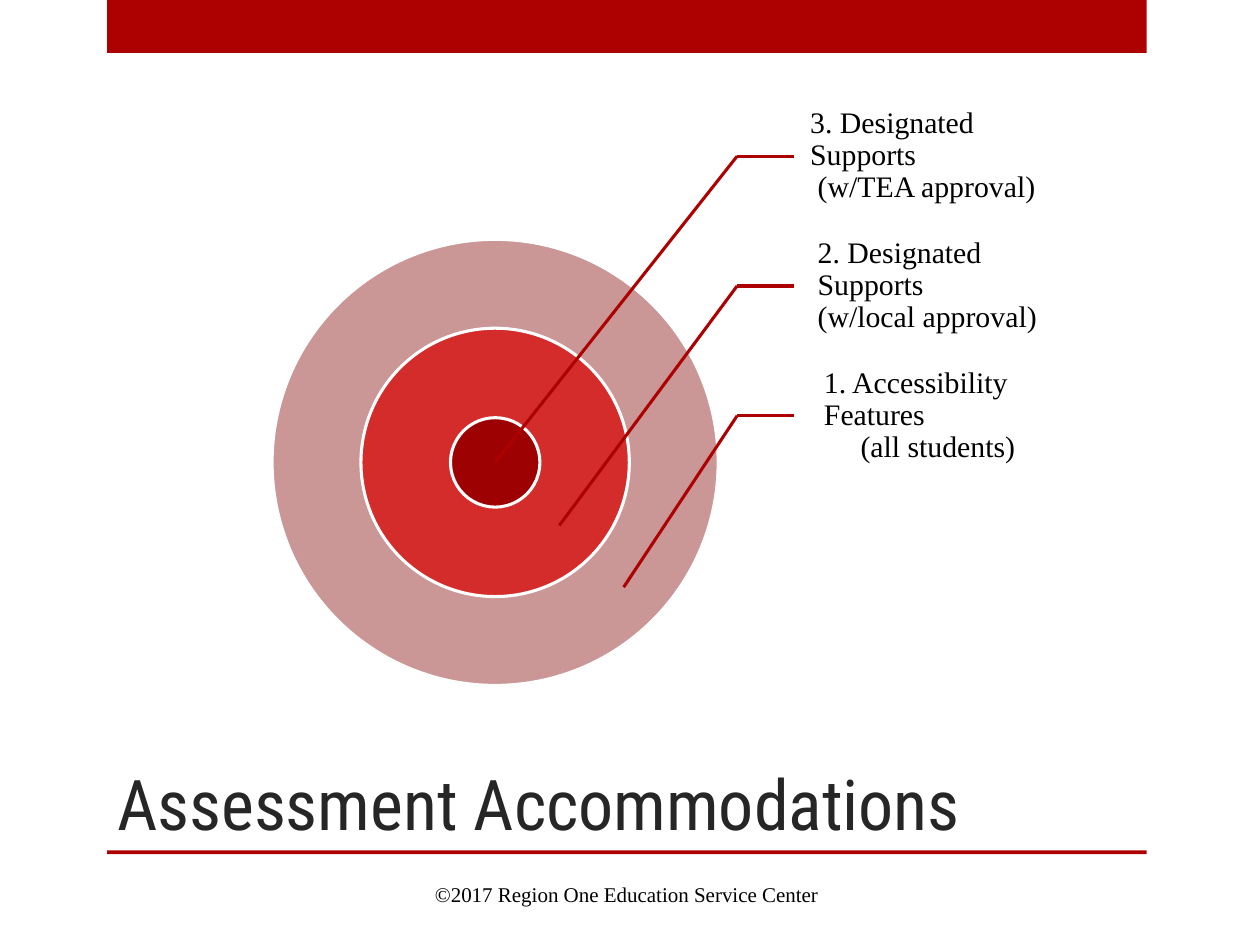
from pptx import Presentation
from pptx.dml.color import RGBColor
from pptx.enum.shapes import MSO_CONNECTOR, MSO_SHAPE
from pptx.enum.text import MSO_ANCHOR, PP_ALIGN
from pptx.oxml.ns import qn
from pptx.util import Inches, Pt
from lxml import etree

RED = "AD0101"
SERIF = "Times New Roman"


def color(fmt, value):
    if hasattr(fmt, "solid"):
        fmt.solid()
        fmt = fmt.fore_color
    else:
        fmt = fmt.color
    fmt.rgb = RGBColor.from_string(value)


def add_run(p, text, size, font, value):
    r = p.add_run()
    r.text = text
    r.font.size = Pt(size)
    r.font.name = font
    color(r.font, value)


prs = Presentation()
prs.slide_width, prs.slide_height = Inches(10), Inches(7.5)
s = prs.slides.add_slide(prs.slide_layouts[5])

for top, height in ((0, 0.42), (6.75, 0.03)):
    sp = s.shapes.add_shape(MSO_SHAPE.RECTANGLE, Inches(0.85), Inches(top), Inches(8.25), Inches(height))
    sp.shadow.inherit = False
    color(sp.fill, RED)
    sp.line.fill.background()

title = s.shapes.title
title.left, title.top, title.width, title.height = Inches(0.83), Inches(5), Inches(7.42), Inches(1.75)
tf = title.text_frame
tf.vertical_anchor = MSO_ANCHOR.BOTTOM
p = tf.paragraphs[0]
p.alignment = PP_ALIGN.LEFT
add_run(p, "Assessment Accommodations", 40, "Roboto Condensed", "262626")

cx, cy = 3.93, 3.67
for size, fill in ((3.54, "CA9696"), (2.13, "D42B2B"), (0.71, "9D0101")):
    sp = s.shapes.add_shape(MSO_SHAPE.OVAL, Inches(cx - size / 2), Inches(cy - size / 2), Inches(size), Inches(size))
    sp.shadow.inherit = False
    color(sp.fill, fill)
    color(sp.line, "FFFFFF")
    sp.line.width = Pt(1.75)

elbow_x, label_x, label_h = 5.85, 6.3, 1.03
labels = [
    ("3. Designated Supports", "(w/TEA approval)", 0.06, 6.3, 2.28, 1.24, cx, cy),
    ("2. Designated Supports", "(w/local approval)", 0, 6.36, 2.27, 2.27, 4.44, 4.17),
    ("1. Accessibility Features", "(all students)", 0.29, 6.41, 1.77, 3.3, 4.95, 4.66),
]
for name, note, indent, left, width, y, ring_x, ring_y in labels:
    box = s.shapes.add_textbox(Inches(left), Inches(y - label_h / 2), Inches(width), Inches(label_h))
    tf = box.text_frame
    tf.word_wrap = True
    tf.vertical_anchor = MSO_ANCHOR.MIDDLE
    tf.margin_left = Inches(0.13)
    tf.margin_top = tf.margin_right = tf.margin_bottom = Inches(0.02)
    for p, text, margin in ((tf.paragraphs[0], name, 0), (tf.add_paragraph(), note, indent)):
        p.line_spacing = 0.9
        p._p.get_or_add_pPr().set("marL", str(Inches(margin)))
        add_run(p, text, 17, SERIF, "000000")

    for end_x, end_y in ((label_x, y), (ring_x, ring_y)):
        line = s.shapes.add_connector(
            MSO_CONNECTOR.STRAIGHT, Inches(elbow_x), Inches(y), Inches(end_x), Inches(end_y))
        color(line.line, RED)
        line.line.width = Pt(1.75)
        etree.SubElement(line._element.spPr, qn("a:effectLst"))
        if end_x == left:
            line.end_connect(box, 1)

footer = s.shapes.add_textbox(Inches(0.87), Inches(6.9), Inches(8.21), Inches(0.4))
tf = footer.text_frame
tf.word_wrap = True
tf.vertical_anchor = MSO_ANCHOR.MIDDLE
p = tf.paragraphs[0]
p.alignment = PP_ALIGN.CENTER
add_run(p, "©2017 Region One Education Service Center", 12, SERIF, "000000")

prs.save("out.pptx")
